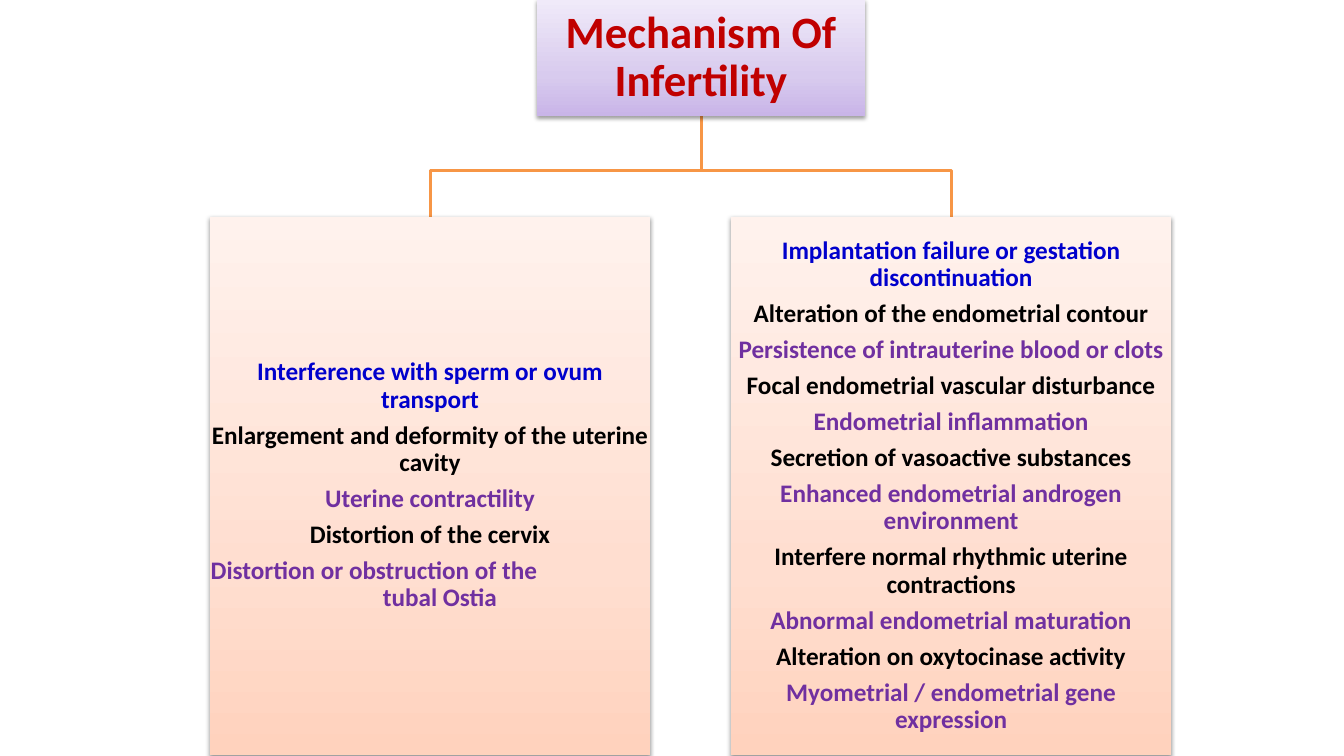
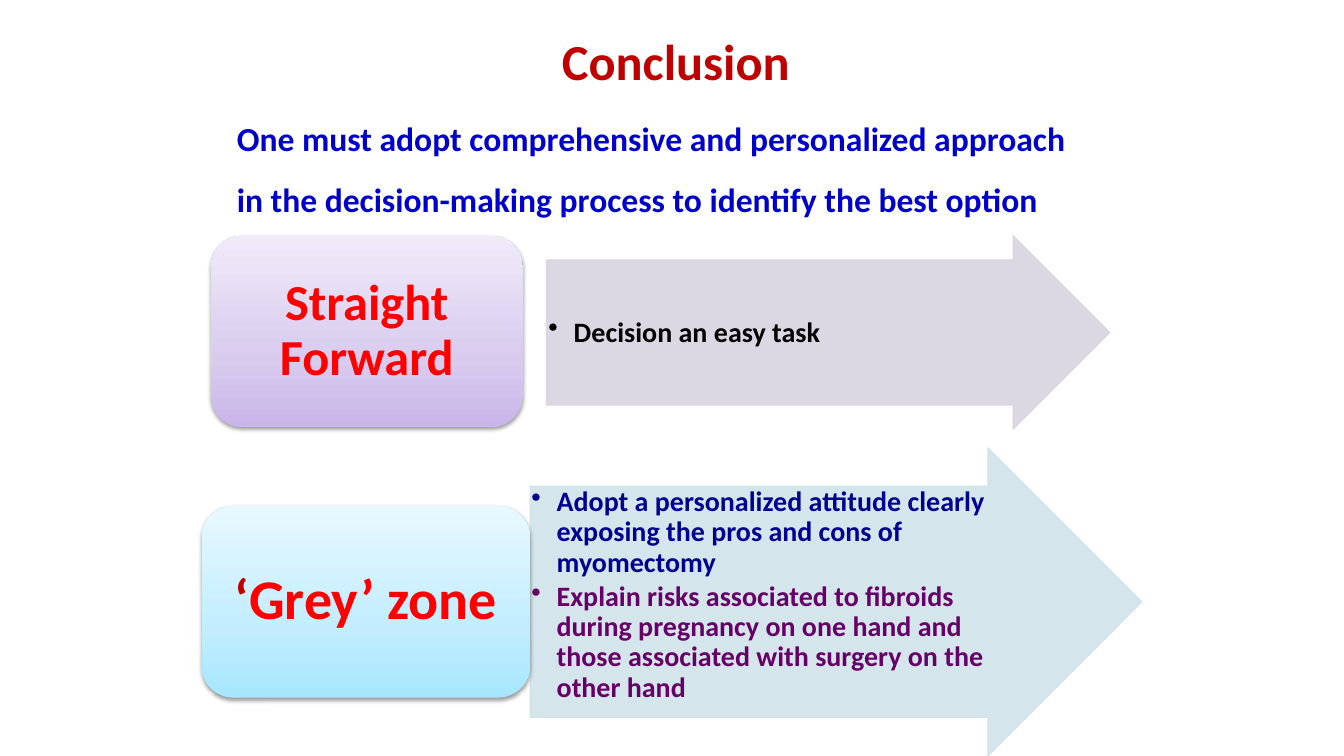
from dataclasses import dataclass

from lxml import etree
from pptx import Presentation
from pptx.dml.color import RGBColor
from pptx.enum.shapes import MSO_SHAPE
from pptx.enum.text import MSO_ANCHOR, PP_ALIGN
from pptx.oxml.ns import qn
from pptx.util import Cm, Length, Pt

RECTANGLE, ROUNDED, ARROW = MSO_SHAPE.RECTANGLE, MSO_SHAPE.ROUNDED_RECTANGLE, MSO_SHAPE.RIGHT_ARROW
TOP, MIDDLE = MSO_ANCHOR.TOP, MSO_ANCHOR.MIDDLE
LEFT, CENTER = PP_ALIGN.LEFT, PP_ALIGN.CENTER

FONT = "Calibri"
BLACK = RGBColor(0x00, 0x00, 0x00)
BLUE = RGBColor(0x00, 0x00, 0xCC)
NAVY = RGBColor(0x00, 0x00, 0x90)
PURPLE = RGBColor(0x70, 0x30, 0xA0)
PLUM = RGBColor(0x66, 0x00, 0x66)
RED = RGBColor(0xFF, 0x00, 0x00)
DARK_RED = RGBColor(0xC0, 0x00, 0x00)
ORANGE = RGBColor(0xF7, 0x96, 0x46)
PALE_LILAC = RGBColor(0xD8, 0xD3, 0xE0)
PALE_BLUE = RGBColor(0xD0, 0xE3, 0xEA)

# Gradient colours from bottom to top, at the shared stops
GRADIENT_STOPS = (0, 35, 100)
LILAC_GRADIENT = (RGBColor(0xC9, 0xB5, 0xE8), RGBColor(0xD8, 0xCB, 0xEE), RGBColor(0xF0, 0xEA, 0xF9))
PEACH_GRADIENT = (RGBColor(0xFF, 0xD2, 0xBD), RGBColor(0xFF, 0xDE, 0xD0), RGBColor(0xFF, 0xF2, 0xED))
SKY_GRADIENT = (RGBColor(0xA7, 0xE6, 0xFF), RGBColor(0xC1, 0xED, 0xFF), RGBColor(0xE7, 0xF8, 0xFF))


@dataclass(frozen=True)
class Box:
    left: Length
    top: Length
    width: Length
    height: Length

    @property
    def center(self) -> int:
        return self.left + self.width // 2

    @property
    def bottom(self) -> int:
        return self.top + self.height


@dataclass(frozen=True)
class Line:
    text: str
    color: RGBColor
    tail: str = ""
    tail_color: RGBColor = RED
    hanging: Length = Cm(0)
    bullet: bool = False


@dataclass(frozen=True)
class TextStyle:
    size: int
    align: PP_ALIGN = CENTER
    anchor: MSO_ANCHOR = MIDDLE
    spacing: float = 0.9
    after: float = 0.35
    inset_x: Length = Cm(0.05)
    inset_y: Length = Cm(0.05)


@dataclass(frozen=True)
class Card:
    """A shadowed gradient shape with text."""
    box: Box
    kind: MSO_SHAPE
    gradient: tuple[RGBColor, ...]
    style: TextStyle
    lines: list[Line]


@dataclass(frozen=True)
class AdviceArrow:
    box: Box
    color: RGBColor
    style: TextStyle
    lines: list[Line]


def write_lines(frame, lines: list[Line], style: TextStyle) -> None:
    frame.word_wrap = True
    frame.vertical_anchor = style.anchor
    frame.margin_left = frame.margin_right = style.inset_x
    frame.margin_top = frame.margin_bottom = style.inset_y
    for index, line in enumerate(lines):
        paragraph = frame.add_paragraph() if index else frame.paragraphs[0]
        paragraph.text = line.text
        if line.hanging:
            properties = paragraph._p.get_or_add_pPr()
            properties.set("marL", str(line.hanging))
            properties.set("indent", str(-line.hanging))
            if line.bullet:
                etree.SubElement(properties, qn("a:buChar"), char="•")
        paragraph.alignment = LEFT if line.hanging else style.align
        paragraph.line_spacing = style.spacing
        paragraph.space_after = Pt(style.after * style.size)
        colored_runs = [(run, line.color) for run in paragraph.runs]
        if line.tail:
            tail = paragraph.add_run()
            tail.text = line.tail
            colored_runs.append((tail, line.tail_color))
        for run, color in colored_runs:
            run.font.name = FONT
            run.font.size = Pt(style.size)
            run.font.bold = True
            run.font.color.rgb = color


def add_text(slide, box: Box, line: Line, style: TextStyle) -> None:
    textbox = slide.shapes.add_textbox(box.left, box.top, box.width, box.height)
    write_lines(textbox.text_frame, [line], style)


def add_color(parent, color: RGBColor, alpha: int = 100) -> None:
    element = etree.SubElement(parent, qn("a:srgbClr"), val=str(color))
    if alpha < 100:
        etree.SubElement(element, qn("a:alpha"), val=str(alpha * 1000))


def draw_card(slide, card: Card) -> None:
    box = card.box
    shape = slide.shapes.add_shape(card.kind, box.left, box.top, box.width, box.height)
    shape.line.fill.background()
    shape.fill.gradient()
    shape.fill.gradient_angle = 90
    stops = shape._element.spPr.find(".//" + qn("a:gsLst"))
    for stop in list(stops):
        stops.remove(stop)
    for position, color in zip(GRADIENT_STOPS, card.gradient):
        add_color(etree.SubElement(stops, qn("a:gs"), pos=str(position * 1000)), color)
    shape.shadow.inherit = False
    effects = shape._element.spPr.find(qn("a:effectLst"))
    shadow = etree.SubElement(effects, qn("a:outerShdw"), blurRad=str(Pt(3.1)),
                              dist=str(Pt(1.6)), dir="5400000", rotWithShape="0")
    add_color(shadow, BLACK, 38)
    write_lines(shape.text_frame, card.lines, card.style)


def draw_arrow(slide, arrow: AdviceArrow) -> None:
    box = arrow.box
    shape = slide.shapes.add_shape(ARROW, box.left, box.top, box.width, box.height)
    shape.adjustments[0], shape.adjustments[1] = 0.75, 0.5
    shape.shadow.inherit = False
    shape.line.width = Pt(0.75)
    for fill in (shape.fill, shape.line.fill):
        fill.solid()
        fill.fore_color.rgb = arrow.color
    for color in shape._element.spPr.iter(qn("a:srgbClr")):
        etree.SubElement(color, qn("a:alpha"), val="90000")
    write_lines(shape.text_frame, arrow.lines, arrow.style)


def draw_branch(slide, parent: Box, child: Box) -> None:
    """Draw an angled line from the parent's bottom to the child's top."""
    turn = Cm(4.29)
    builder = slide.shapes.build_freeform(parent.center, parent.bottom)
    builder.add_line_segments(
        [(parent.center, turn), (child.center, turn), (child.center, child.top)], close=False)
    branch = builder.convert_to_shape()
    branch.fill.background()
    branch.line.color.rgb = ORANGE
    branch.line.width = Pt(2)
    branch.shadow.inherit = False


def build_mechanism(slide) -> None:
    heading = Box(Cm(13.54), Cm(0), Cm(8.26), Cm(2.92))
    causes = [
        [
            Line("Interference with sperm or ovum transport", BLUE),
            Line("Enlargement and deformity of the uterine cavity", BLACK),
            Line("Uterine contractility", PURPLE),
            Line("Distortion of the cervix", BLACK),
            Line("Distortion or obstruction of the\vtubal Ostia", PURPLE, hanging=Cm(4.34)),
        ],
        [
            Line("Implantation failure or gestation discontinuation", BLUE),
            Line("Alteration of the endometrial contour", BLACK),
            Line("Persistence of intrauterine blood or clots", PURPLE),
            Line("Focal endometrial vascular disturbance", BLACK),
            Line("Endometrial inflammation", PURPLE),
            Line("Secretion of vasoactive substances", BLACK),
            Line("Enhanced endometrial androgen environment", PURPLE),
            Line("Interfere normal rhythmic uterine contractions", BLACK),
            Line("Abnormal endometrial maturation", PURPLE),
            Line("Alteration on oxytocinase activity", BLACK),
            Line("Myometrial / endometrial gene expression", PURPLE),
        ],
    ]
    cause_style = TextStyle(18, inset_x=Cm(0.02), inset_y=Cm(0.02))
    cards = [Card(Box(Cm(5.29 + 13.13 * column), Cm(5.46), Cm(11.1), Cm(13.56)),
                  RECTANGLE, PEACH_GRADIENT, cause_style, lines)
             for column, lines in enumerate(causes)]
    for card in cards:
        draw_branch(slide, heading, card.box)
    title = Line("Mechanism Of Infertility", DARK_RED)
    for card in [Card(heading, RECTANGLE, LILAC_GRADIENT, TextStyle(32), [title]), *cards]:
        draw_card(slide, card)


def build_conclusion(slide) -> None:
    plain = {"anchor": TOP, "after": 0, "inset_x": Cm(0.25), "inset_y": Cm(0.13)}
    add_text(slide, Box(Cm(5.72), Cm(2.34), Cm(21.9), Cm(4.88)),
             Line("One must adopt comprehensive and personalized approach in the "
                  "decision-making process to identify the best option", BLUE),
             TextStyle(24, align=LEFT, spacing=1.5, **plain))
    add_text(slide, Box(Cm(11), Cm(0.64), Cm(12.07), Cm(1.8)),
             Line("Conclusion", DARK_RED), TextStyle(36, spacing=1, **plain))

    bullet = {"hanging": Cm(0.64), "bullet": True}
    advice = {"size": 20, "align": LEFT, "anchor": TOP, "after": 0.15}
    arrows = [
        AdviceArrow(Box(Cm(13.77), Cm(5.94), Cm(14.2), Cm(4.88)), PALE_LILAC,
                    TextStyle(inset_y=Cm(1.46), **advice),
                    [Line("Decision an easy task", BLACK, **bullet)]),
        AdviceArrow(Box(Cm(13.36), Cm(11.28), Cm(15.42), Cm(7.77)), PALE_BLUE,
                    TextStyle(inset_x=Cm(0.03), inset_y=Cm(0.03), **advice),
                    [Line("Adopt a personalized attitude clearly exposing the pros and cons "
                          "of myomectomy", NAVY, **bullet),
                     Line("Explain risks associated to fibroids during pregnancy on one hand "
                          "and those associated with surgery on the other hand", PLUM, **bullet)]),
    ]
    cases = [
        Card(Box(Cm(5.31), Cm(5.94), Cm(7.87), Cm(4.83)), ROUNDED, LILAC_GRADIENT,
             TextStyle(36, inset_x=Cm(0.38), inset_y=Cm(0.18)),
             [Line("Straight Forward", RED)]),
        Card(Box(Cm(5.08), Cm(12.75), Cm(8.28), Cm(4.83)), ROUNDED, SKY_GRADIENT,
             TextStyle(40, inset_x=Cm(0.43), inset_y=Cm(0.2)),
             [Line("‘", DARK_RED, tail="Grey’ zone")]),
    ]
    for arrow, case in zip(arrows, cases):
        draw_arrow(slide, arrow)
        draw_card(slide, case)


def main() -> None:
    presentation = Presentation()
    presentation.slide_width, presentation.slide_height = Cm(33.87), Cm(19.05)
    blank = presentation.slide_layouts[6]
    for build in (build_mechanism, build_conclusion):
        build(presentation.slides.add_slide(blank))
    presentation.save("out.pptx")


if __name__ == "__main__":
    main()
